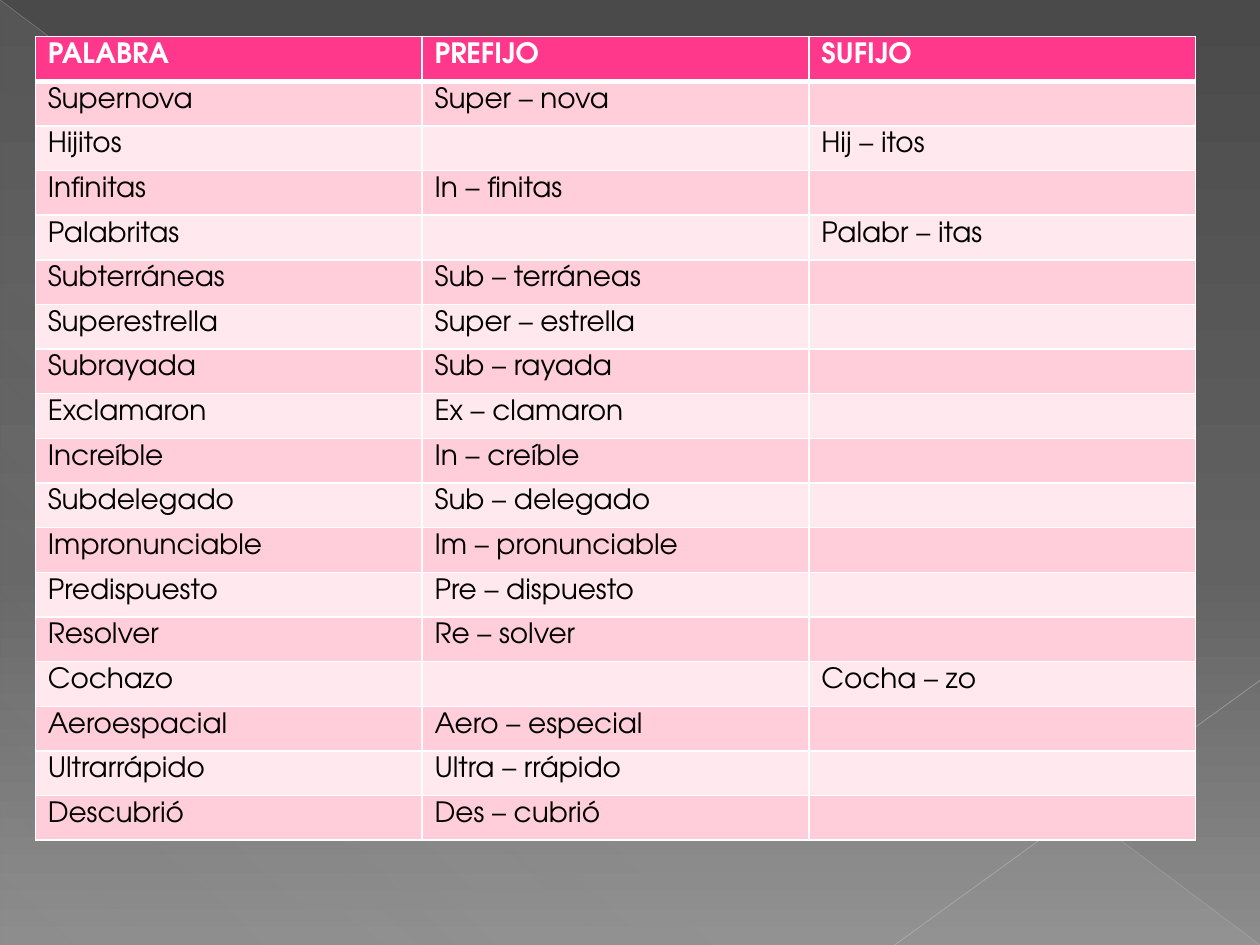
from lxml import etree
from pptx import Presentation
from pptx.dml.color import RGBColor
from pptx.enum.shapes import MSO_CONNECTOR, MSO_SHAPE
from pptx.oxml.ns import qn
from pptx.util import Inches, Pt

STRAIGHT = MSO_CONNECTOR.STRAIGHT
TRIANGLE = MSO_SHAPE.RIGHT_TRIANGLE

DARK = RGBColor(0x4A, 0x4A, 0x4A)
MIDDLE = RGBColor(0x62, 0x62, 0x62)
LIGHT = RGBColor(0x8C, 0x8C, 0x8C)
SHEEN = RGBColor(0xD2, 0xD2, 0xD2)
FALLING_LINE = RGBColor(0xBF, 0xBF, 0xBF)
RISING_LINE = RGBColor(0xC6, 0xC6, 0xC6)
WHITE = RGBColor(0xFF, 0xFF, 0xFF)
BLACK = RGBColor(0x00, 0x00, 0x00)
HEADER_PINK = RGBColor(0xFF, 0x38, 0x8C)
BANDS = (RGBColor(0xFF, 0xE8, 0xEE), RGBColor(0xFF, 0xCE, 0xDA))

FONT = "TeX Gyre Adventor"
TEXT_SIZE = Pt(16)
WIDTH, HEIGHT = Inches(10), Inches(7.5)

ROWS = [
    ("PALABRA", "PREFIJO", "SUFIJO"),
    ("Supernova", "Super – nova", ""),
    ("Hijitos", "", "Hij – itos"),
    ("Infinitas", "In – finitas", ""),
    ("Palabritas", "", "Palabr – itas"),
    ("Subterráneas", "Sub – terráneas", ""),
    ("Superestrella", "Super – estrella", ""),
    ("Subrayada", "Sub – rayada", ""),
    ("Exclamaron", "Ex – clamaron", ""),
    ("Increíble", "In – creíble", ""),
    ("Subdelegado", "Sub – delegado", ""),
    ("Impronunciable", "Im – pronunciable", ""),
    ("Predispuesto", "Pre – dispuesto", ""),
    ("Resolver", "Re – solver", ""),
    ("Cochazo", "", "Cocha – zo"),
    ("Aeroespacial", "Aero – especial", ""),
    ("Ultrarrápido", "Ultra – rrápido", ""),
    ("Descubrió", "Des – cubrió", ""),
]


def add_color(parent, color, opacity=100):
    node = etree.SubElement(parent, qn("a:srgbClr"), val=str(color))
    if opacity < 100:
        etree.SubElement(node, qn("a:alpha"), val=str(opacity * 1000))


def paint_gradient(fill, owner, stops, angle):
    fill.gradient()
    gradient = next(owner.iter(qn("a:gradFill")))
    for child in list(gradient):
        gradient.remove(child)
    stop_list = etree.SubElement(gradient, qn("a:gsLst"))
    for position, color, opacity in stops:
        stop = etree.SubElement(stop_list, qn("a:gs"), pos=str(position * 1000))
        add_color(stop, color, opacity)
    etree.SubElement(gradient, qn("a:lin"), ang=str(angle * 60000), scaled="0")


def add_thin_line(page, start, end, color, width, opacity):
    line = page.shapes.add_connector(STRAIGHT, *start, *end)
    line.line.color.rgb = color
    line.line.width = Pt(width)
    tint = next(line._element.spPr.iter(qn("a:srgbClr")))
    etree.SubElement(tint, qn("a:alpha"), val=str(opacity * 1000))
    etree.SubElement(line._element.spPr, qn("a:effectLst"))


def add_backdrop(page, box):
    left, top, width, height = box
    stops = [(0, DARK, 100), (60, MIDDLE, 100), (100, LIGHT, 100)]
    paint_gradient(page.background.fill, page._element, stops, 90)

    sheen = page.shapes.add_shape(TRIANGLE, left, top, width, height)
    sheen.shadow.inherit = False
    sheen.line.fill.background()
    stops = [(0, SHEEN, 10), (70, SHEEN, 8), (100, SHEEN, 1)]
    paint_gradient(sheen.fill, sheen._element, stops, 133)

    right, bottom = left + width, top + height
    add_thin_line(page, (left, top), (right, bottom), FALLING_LINE, 0.39, 35)
    rising_start = (right, top + int(height * 0.72))
    rising_end = (left + int(width * 0.71), bottom)
    add_thin_line(page, rising_start, rising_end, RISING_LINE, 0.47, 45)


def set_borders(cell, top_width, bottom_width):
    properties = cell._tc.get_or_add_tcPr()
    sides = (("L", 1), ("R", 1), ("T", top_width), ("B", bottom_width))
    for index, (side, width) in enumerate(sides):
        border = etree.Element(qn(f"a:ln{side}"), w=str(Pt(width)))
        add_color(etree.SubElement(border, qn("a:solidFill")), WHITE)
        properties.insert(index, border)


def fill_cell(cell, text, row_index):
    header = row_index == 0
    cell.margin_top = Inches(0.05)
    cell.margin_bottom = 0
    cell.fill.solid()
    cell.fill.fore_color.rgb = HEADER_PINK if header else BANDS[row_index % 2]
    set_borders(cell, 3 if row_index == 1 else 1, 3 if header else 1)
    para = cell.text_frame.paragraphs[0]
    if text:
        span = para.add_run()
        span.text = text
        span.font.name = FONT
        span.font.size = TEXT_SIZE
        span.font.bold = header
        span.font.color.rgb = WHITE if header else BLACK
    else:
        size = str(int(TEXT_SIZE.pt * 100))
        ending = etree.SubElement(para._p, qn("a:endParaRPr"), sz=size)
        etree.SubElement(ending, qn("a:latin"), typeface=FONT)


def add_word_table(page, box):
    left, top, width, height = box
    column_count = len(ROWS[0])
    table = page.shapes.add_table(
        len(ROWS), column_count, left, top, width, height
    ).table
    for column in table.columns:
        column.width = width // column_count
    for row_index, words in enumerate(ROWS):
        table.rows[row_index].height = height // len(ROWS)
        for column_index, text in enumerate(words):
            fill_cell(table.cell(row_index, column_index), text, row_index)


def main():
    deck = Presentation()
    deck.slide_width, deck.slide_height = WIDTH, HEIGHT
    page = deck.slides.add_slide(deck.slide_layouts[6])
    add_backdrop(page, (0, 0, WIDTH, HEIGHT))
    add_word_table(page, (Inches(0.28), Inches(0.29), Inches(9.21), Inches(6.38)))
    deck.save("out.pptx")


if __name__ == "__main__":
    main()
